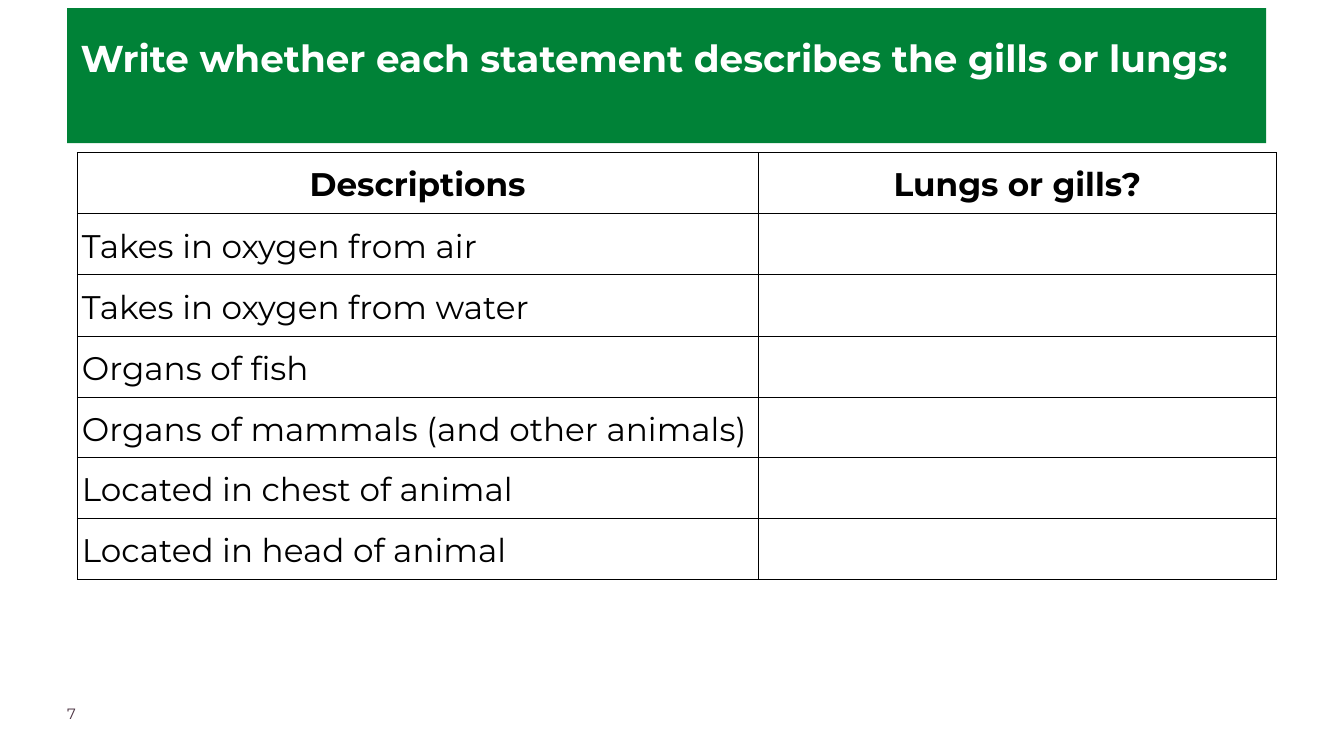
"""Build a worksheet slide on telling gills from lungs."""
from lxml import etree
from pptx import Presentation
from pptx import util as u
from pptx.dml.color import RGBColor
from pptx.enum import text
from pptx.oxml import ns

PX = 9144
FONT = "Montserrat"
GREEN = RGBColor(0x00, 0x82, 0x37)
WHITE = RGBColor(0xFF, 0xFF, 0xFF)
BLACK = RGBColor(0x00, 0x00, 0x00)
PLUM = RGBColor(0x4B, 0x32, 0x41)

HEADINGS = ["Descriptions", "Lungs or gills?"]
DESCRIPTIONS = [
    "Takes in oxygen from air",
    "Takes in oxygen from water",
    "Organs of fish",
    "Organs of mammals (and other animals)",
    "Located in chest of animal",
    "Located in head of animal",
]
COLUMN_WIDTHS = [1013, 772]
ROW_HEIGHTS = [91, 91, 91, 91, 89, 91, 91]


def px(*lengths):
    return [u.Emu(length * PX) for length in lengths]


def apply(target, values):
    for name, value in values.items():
        setattr(target, name, value)


def write(frame, words, size, color, bold=False, spacing=1.0,
          align=text.PP_ALIGN.LEFT):
    frame.text = words
    paragraph = frame.paragraphs[0]
    apply(paragraph, {"alignment": align, "line_spacing": spacing})
    font = paragraph.runs[0].font
    apply(font, {"name": FONT, "size": u.Pt(size), "bold": bold})
    font.color.rgb = color


def format_frame(frame, margin):
    apply(frame, {
        "word_wrap": True,
        "auto_size": text.MSO_AUTO_SIZE.NONE,
        "vertical_anchor": text.MSO_ANCHOR.TOP,
        **dict.fromkeys(
            ("margin_left", "margin_top", "margin_right", "margin_bottom"),
            u.Emu(margin * PX)),
    })


def place_title(slide, words):
    banner = slide.shapes.title
    left, top, width, height = px(100, 12, 1784, 201)
    apply(banner, {"left": left, "top": top, "width": width, "height": height})
    banner.fill.solid()
    banner.fill.fore_color.rgb = GREEN
    format_frame(banner.text_frame, 20)
    write(banner.text_frame, words, 40, WHITE, bold=True, spacing=1.3)


def add_page_number(slide, number):
    frame = slide.shapes.add_textbox(*px(100, 1048, 157, 39)).text_frame
    format_frame(frame, 0)
    write(frame, number, 16, PLUM)


def format_cell(cell):
    side, end = px(7, 10)
    apply(cell, {"margin_left": side, "margin_right": side,
                 "margin_top": end, "margin_bottom": end})
    properties = cell._tc.get_or_add_tcPr()
    for edge in ("a:lnL", "a:lnR", "a:lnT", "a:lnB"):
        line = etree.SubElement(properties, ns.qn(edge), w=str(u.Pt(1)))
        fill = etree.SubElement(line, ns.qn("a:solidFill"))
        etree.SubElement(fill, ns.qn("a:srgbClr"), val=str(BLACK))
    cell.fill.background()


def add_worksheet(slide):
    rows = [HEADINGS] + [[description, ""] for description in DESCRIPTIONS]
    worksheet = slide.shapes.add_table(
        len(rows), len(HEADINGS),
        *px(115, 227, sum(COLUMN_WIDTHS), sum(ROW_HEIGHTS))).table
    apply(worksheet, {"first_row": False, "horz_banding": False})
    for column, width in zip(worksheet.columns, px(*COLUMN_WIDTHS)):
        column.width = width
    for row, height in zip(worksheet.rows, px(*ROW_HEIGHTS)):
        row.height = height
    for r, row in enumerate(rows):
        heading = r == 0
        align = text.PP_ALIGN.CENTER if heading else text.PP_ALIGN.LEFT
        for c, words in enumerate(row):
            cell = worksheet.cell(r, c)
            format_cell(cell)
            if words:
                write(cell.text_frame, words, 35, BLACK, heading, 1.15, align)


def main():
    deck = Presentation()
    deck.slide_width, deck.slide_height = px(2000, 1125)
    slide = deck.slides.add_slide(deck.slide_layouts[5])
    add_page_number(slide, "7")
    place_title(slide, "Write whether each statement describes the gills or lungs:")
    add_worksheet(slide)
    deck.save("out.pptx")


if __name__ == "__main__":
    main()
